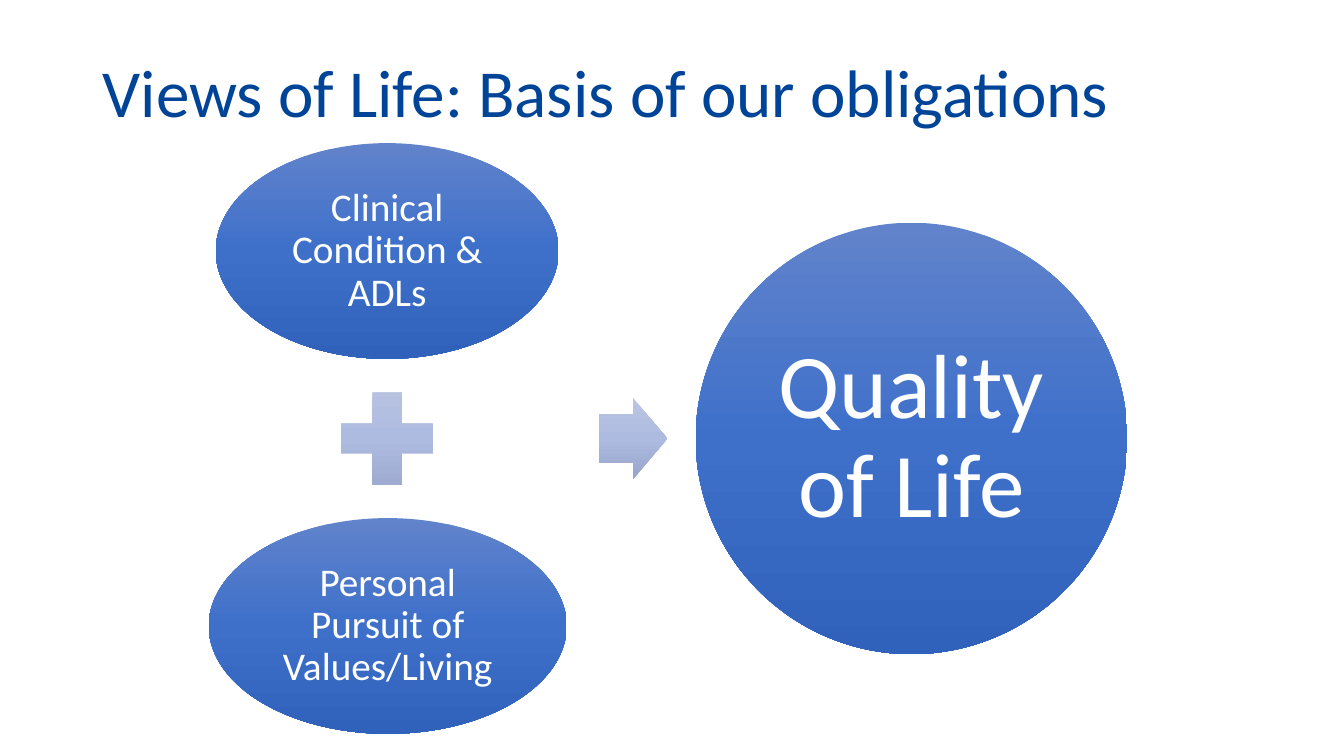
from copy import deepcopy
from dataclasses import dataclass

from pptx import Presentation
from pptx.dml.color import RGBColor
from pptx.enum.shapes import MSO_SHAPE as SHAPE
from pptx.enum.text import MSO_ANCHOR as ANCHOR, PP_ALIGN as ALIGN
from pptx.oxml.ns import qn
from pptx.util import Pt

PX = 9144  # EMU per px, 100 px to the inch


@dataclass(frozen=True)
class Theme:
    font: str = "Calibri"
    title: str = "004498"
    label: str = "FFFFFF"
    strong: tuple = ("6183CB", "3E70CA", "3062BB")
    pale: tuple = ("BBC5E3", "AEBBE0", "98A4CB")
    title_size: int = 48
    part_size: int = 28
    result_size: int = 65


class Deck:
    def __init__(self, theme, width, height):
        self.theme = theme
        self.prs = Presentation()
        self.prs.slide_width, self.prs.slide_height = width * PX, height * PX
        self.slide = self.prs.slides.add_slide(self.prs.slide_layouts[6])

    def set_text(self, s, text, size, color, align, inset=None):
        tf = s.text_frame
        frame = {"word_wrap": True, "vertical_anchor": ANCHOR.MIDDLE}
        if inset is not None:
            sides = ("left", "top", "right", "bottom")
            frame |= {f"margin_{side}": inset * PX for side in sides}
        for name, value in frame.items():
            setattr(tf, name, value)
        p = tf.paragraphs[0]
        p.alignment, p.line_spacing = align, 0.9
        r = p.add_run()
        r.text = text
        for name, value in {"name": self.theme.font, "size": Pt(size)}.items():
            setattr(r.font, name, value)
        r.font.color.rgb = RGBColor.from_string(color)

    def title(self, text, *box):
        s = self.slide.shapes.add_textbox(*(v * PX for v in box))
        self.set_text(s, text, self.theme.title_size, self.theme.title, ALIGN.LEFT)

    def shape(self, kind, colors, *box):
        s = self.slide.shapes.add_shape(kind, *(v * PX for v in box))
        s.shadow.inherit = False
        s.line.fill.background()
        s.fill.gradient()
        s.fill.gradient_angle = 270
        # Extend the default two stops to three
        first = s._element.spPr.find(".//" + qn("a:gs"))
        first.addnext(deepcopy(first))
        for stop, color, place in zip(s.fill.gradient_stops, colors, (0, 0.5, 1)):
            stop.color.rgb = RGBColor.from_string(color)
            stop.position = place
        return s

    def bubble(self, text, size, inset, *box):
        s = self.shape(SHAPE.OVAL, self.theme.strong, *box)
        self.set_text(s, text, size, self.theme.label, ALIGN.CENTER, inset)


def main():
    theme = Theme()
    deck = Deck(theme, 1333, 750)
    deck.title("Views of Life: Basis of our obligations", 92, 22, 1150, 145)

    # Left column: two parts joined by a plus, centred on one axis
    axis, top, gap = 384, 142, 17
    for text, w, h in (
        ("Clinical Condition & ADLs", 340, 214),
        (None, 124, 124),
        ("Personal Pursuit of Values/Living", 355, 214),
    ):
        box = (axis - w // 2, top, w, h)
        if text:
            deck.bubble(text, theme.part_size, 4, *box)
        else:
            deck.shape(SHAPE.MATH_PLUS, theme.pale, *box)
        top += h + gap

    # Arrow and result, centred on the plus
    middle = 435
    arrow = deck.shape(SHAPE.RIGHT_ARROW, theme.pale, 594, middle - 40, 68, 80)
    arrow.adjustments[0] = 0.6
    deck.bubble("Quality of Life", theme.result_size, 9,
                690, middle - 214, 428, 428)

    deck.prs.save("out.pptx")


if __name__ == "__main__":
    main()
